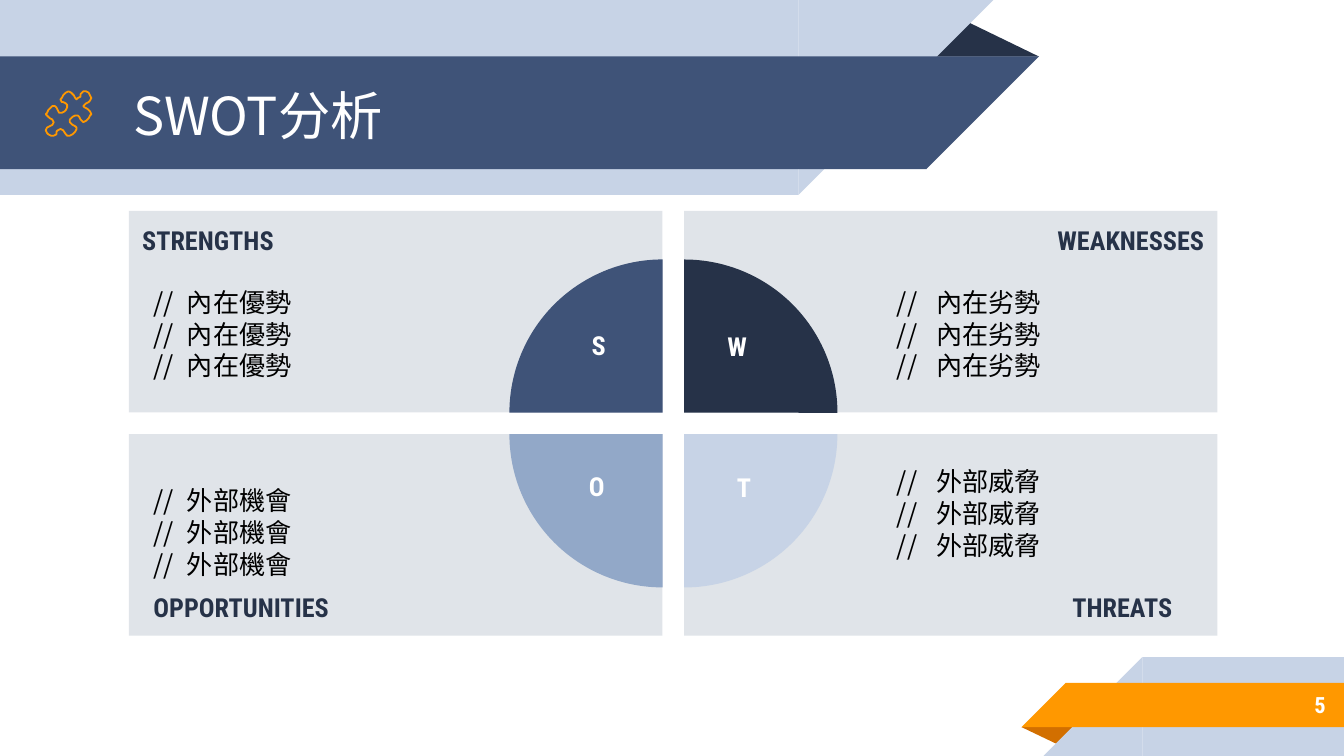
from lxml import etree
from pptx import Presentation
from pptx.dml.color import RGBColor
from pptx.enum.shapes import MSO_SHAPE as SHAPE
from pptx.enum.text import MSO_ANCHOR as ANCHOR, MSO_AUTO_SIZE as FIT, PP_ALIGN as ALIGN
from pptx.oxml.ns import qn
from pptx.util import Pt

SANS, CONDENSED = "Noto Sans CJK SC", "Roboto Condensed"
NAVY, BLUE, MID, PALE = "263248", "3F5378", "92A8C8", "C7D3E6"
ORANGE, GREY = "FF9800", "E0E4E9"


def add_filled(kind, x, y, w, h, color, rotation=0, flip=False):
    sp = s.shapes.add_shape(kind, Pt(x), Pt(y), Pt(w), Pt(h))
    sp.shadow.inherit = False
    sp.fill.solid()
    sp.fill.fore_color.rgb = RGBColor.from_string(color)
    sp.line.fill.background()
    sp.rotation = rotation
    if flip:
        sp._element.spPr.xfrm.set("flipH", "1")
    return sp


def add_run(p, text, size, font, color, bold=False):
    """Add a run whose font holds for Latin and East Asian letters alike."""
    r = p.add_run()
    r.text = text
    r.font.size, r.font.name, r.font.bold = Pt(size), font, bold
    r.font.color.rgb = RGBColor.from_string(color)
    ea = etree.Element(qn("a:ea"), typeface=font)
    r.font._element.find(qn("a:latin")).addnext(ea)


prs = Presentation()
prs.slide_width, prs.slide_height = Pt(720), Pt(405)
s = prs.slides.add_slide(prs.slide_layouts[5])

# Header ribbon: each band is a bar ending in a slanted tip
fold = add_filled(SHAPE.ISOSCELES_TRIANGLE, 495.4, 10.1, 61.2, 20.2, NAVY)
fold.adjustments[0] = 0.32
for y, bar_w, h, color in [(0, 427.7, 104.4, PALE), (30.2, 496.1, 60.5, BLUE)]:
    add_filled(SHAPE.RECTANGLE, 0, y, bar_w, h, color)
    add_filled(SHAPE.RIGHT_TRIANGLE, bar_w, y, h, h, color, 180, True)

# Footer ribbon
fold = add_filled(SHAPE.ISOSCELES_TRIANGLE, 547.2, 389.5, 31, 10.1, "D26F00", 180)
fold.adjustments[0] = 0.32
for x, y, h, color in [(612, 352.1, 52.9, PALE), (571, 365.8, 23.8, ORANGE)]:
    add_filled(SHAPE.RECTANGLE, x, y, 720 - x, h, color)
    add_filled(SHAPE.RIGHT_TRIANGLE, x - h, y, h, h, color, flip=True)

# Title, raised above the ribbon
title = s.shapes.title
s.shapes._spTree.append(title._element)
title.left, title.top, title.width, title.height = Pt(64.1), Pt(31), Pt(414), Pt(60.5)
tf = title.text_frame
tf.auto_size, tf.vertical_anchor = FIT.NONE, ANCHOR.MIDDLE
tf.paragraphs[0].alignment = ALIGN.LEFT
add_run(tf.paragraphs[0], "SWOT分析", 28, SANS, "FFFFFF")

# Quadrant cards: heading, its left indent and alignment, list item
CARD_X, CARD_Y, CARD_W, CARD_H = (69.1, 366.5), (113, 232.6), 285.8, 108
cards = [
    ("STRENGTHS", 0, ALIGN.LEFT, "內在優勢"),
    ("WEAKNESSES", 0, ALIGN.RIGHT, "內在劣勢"),
    ("OPPORTUNITIES", 6, ALIGN.LEFT, "外部機會"),
    ("THREATS", 100, ALIGN.LEFT, "外部威脅"),
]
for i, (heading, indent, align, item) in enumerate(cards):
    row, col = divmod(i, 2)
    card = add_filled(SHAPE.RECTANGLE, CARD_X[col], CARD_Y[row], CARD_W, CARD_H, GREY)
    tf = card.text_frame
    tf.vertical_anchor = ANCHOR.BOTTOM if row else ANCHOR.TOP
    tf.margin_top = tf.margin_bottom = Pt(7.2)
    tf.margin_left, tf.margin_right = (Pt(108), Pt(7.2)) if col else (Pt(7.2), Pt(108))
    lines = [item] * 3 + [heading] if row else [heading] + [item] * 3
    hang = 21 if col else 18
    for n, line in enumerate(lines):
        p = tf.add_paragraph() if n else tf.paragraphs[0]
        p.line_spacing = Pt(17)
        if line == heading:
            p.alignment = align
            p._p.get_or_add_pPr().set("marL", str(Pt(indent)))
            add_run(p, heading, 14, CONDENSED, NAVY, True)
        else:
            p.alignment = ALIGN.LEFT
            pPr = p._p.get_or_add_pPr()
            pPr.set("marL", str(Pt(6 + hang)))
            pPr.set("indent", str(-Pt(hang)))
            add_run(p, f"//\t{item}", 14, SANS, "000000")
        if row and n == 3:
            p.space_before = Pt(16 if col else 6)
        elif not row and n == 1:
            p.space_before = Pt(16)

# Quarter discs meeting around the gap
PIE_X, PIE_Y, PIE_SIZE = (272.9, 284.4), (139, 150.5), 164.2
for i, (col, row, color) in enumerate([(0, 0, BLUE), (1, 0, NAVY), (1, 1, PALE), (0, 1, MID)]):
    pie = add_filled(SHAPE.PIE, PIE_X[col], PIE_Y[row], PIE_SIZE, PIE_SIZE, color, 90 * i)
    pie.adjustments[0], pie.adjustments[1] = 108, 162

# Letters on the discs, then the slide number
labels = [
    ("S", 311, 172.8, 19.4, 31, 14),
    ("W", 380.2, 173.5, 29.5, 29.5, 14),
    ("O", 308.9, 248.4, 21.6, 31, 14),
    ("T", 388.1, 249.1, 20.9, 29.5, 14),
    ("5", 599.8, 365, 117.4, 25.2, 12),
]
for text, x, y, w, h, size in labels:
    tf = s.shapes.add_textbox(Pt(x), Pt(y), Pt(w), Pt(h)).text_frame
    tf.word_wrap = True
    tf.margin_left = tf.margin_right = 0
    p = tf.paragraphs[0]
    p.alignment = ALIGN.CENTER
    if text == "5":
        tf.margin_right = Pt(7.2)
        tf.vertical_anchor = ANCHOR.MIDDLE
        p.alignment = ALIGN.RIGHT
    add_run(p, text, size, CONDENSED, "FFFFFF", True)

# Puzzle piece outline, in hundredths of an inch
puzzle = [
    (64, 77), (66, 76), (67, 75), (68, 73), (67, 71), (66, 69), (64, 68), (62, 68), (61, 69),
    (60, 70), (60, 72), (58, 73), (57, 74), (56, 73), (55, 71), (53, 69), (51, 68), (49, 69),
    (47, 71), (46, 73), (45, 74), (46, 76), (47, 76), (49, 77), (50, 78), (50, 80), (49, 82),
    (48, 83), (46, 84), (44, 84), (43, 82), (42, 80), (41, 79), (39, 79), (38, 80), (36, 82),
    (35, 84), (34, 85), (35, 86), (37, 88), (39, 89), (40, 91), (39, 93), (37, 94), (35, 95),
    (34, 97), (35, 99), (36, 100), (38, 101), (40, 101), (42, 100), (42, 98), (43, 97), (45, 96),
    (47, 97), (49, 100), (50, 101), (52, 101), (54, 100), (56, 98), (57, 96), (57, 95), (56, 94),
    (54, 93), (53, 92), (52, 91), (52, 89), (53, 88), (54, 87), (56, 86), (58, 86), (59, 87),
    (60, 89), (61, 90), (62, 91), (64, 90), (66, 88), (67, 86), (68, 85), (67, 83), (65, 81),
    (63, 80), (62, 79), (63, 78),
]
outline = s.shapes.build_freeform(*puzzle[0], scale=Pt(0.72))
outline.add_line_segments(puzzle[1:], close=True)
icon = outline.convert_to_shape()
icon.shadow.inherit = False
icon.fill.background()
icon.line.color.rgb = RGBColor.from_string(ORANGE)
icon.line.width = Pt(0.96)

prs.save("out.pptx")
